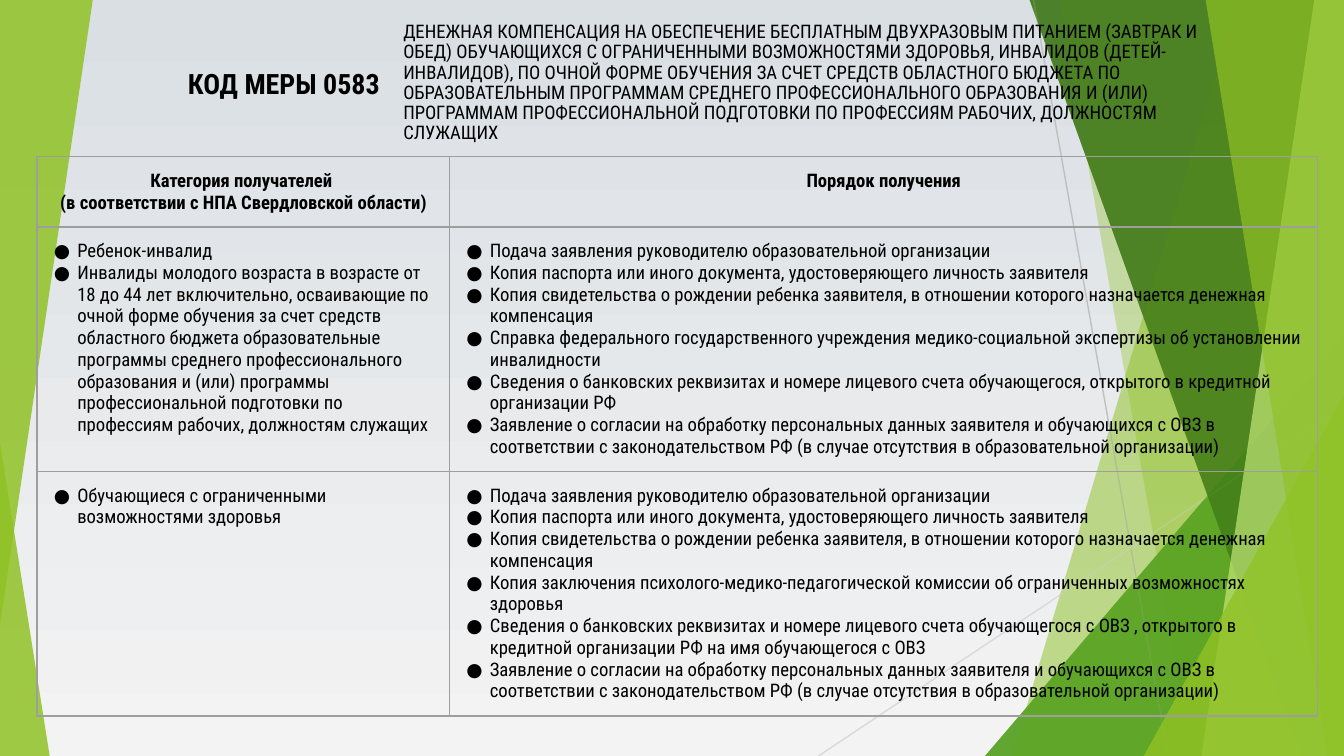
from lxml.etree import SubElement
from pptx import Presentation
from pptx.dml.color import RGBColor
from pptx.enum.shapes import MSO_CONNECTOR, MSO_SHAPE
from pptx.enum.text import MSO_ANCHOR, PP_ALIGN
from pptx.oxml.ns import qn
from pptx.util import Pt

PX = 4572  # 200 px to the inch
SLIDE_BOX = (0, 0, 2000, 1125)
FONT = "Roboto Condensed"

BLACK = RGBColor(0x00, 0x00, 0x00)
SKY = RGBColor(0xDA, 0xDF, 0xE4)
MIST = RGBColor(0xF3, 0xF3, 0xF3)
LIME = RGBColor(0x90, 0xC2, 0x26)
GREEN = RGBColor(0x54, 0xA0, 0x21)
FOREST = RGBColor(0x3F, 0x78, 0x19)
PALE_LIME = RGBColor(0xC0, 0xE4, 0x74)
RAY_DARK = RGBColor(0xBF, 0xBF, 0xBF)
RAY_LIGHT = RGBColor(0xD9, 0xD9, 0xD9)
GRID = RGBColor(0x9E, 0x9E, 0x9E)

# Facets run to the right edge: (top x, bottom x, colour, opacity)
# Corner triangles sit bottom right: (left, top, colour, opacity)
FACETS = [
    (1842, 1506, LIME, 30),
    (1576, 1774, LIME, 20),
    (1466, 500, GREEN, 72),
    (1532, 1936, FOREST, 70),
    (1956, 1788, PALE_LIME, 70),
    (1794, 1976, LIME, 65),
    (1702, 588, LIME, 80),
]
CORNERS = (2, 6)

CODE = "КОД МЕРЫ 0583"
TITLE = (
    "ДЕНЕЖНАЯ КОМПЕНСАЦИЯ НА ОБЕСПЕЧЕНИЕ БЕСПЛАТНЫМ ДВУХРАЗОВЫМ ПИТАНИЕМ (ЗАВТРАК И ОБЕД) "
    "ОБУЧАЮЩИХСЯ С ОГРАНИЧЕННЫМИ ВОЗМОЖНОСТЯМИ ЗДОРОВЬЯ, ИНВАЛИДОВ (ДЕТЕЙ-ИНВАЛИДОВ), "
    "ПО ОЧНОЙ ФОРМЕ ОБУЧЕНИЯ ЗА СЧЕТ СРЕДСТВ ОБЛАСТНОГО БЮДЖЕТА ПО ОБРАЗОВАТЕЛЬНЫМ ПРОГРАММАМ "
    "СРЕДНЕГО ПРОФЕССИОНАЛЬНОГО ОБРАЗОВАНИЯ И (ИЛИ) ПРОГРАММАМ ПРОФЕССИОНАЛЬНОЙ ПОДГОТОВКИ "
    "ПО ПРОФЕССИЯМ РАБОЧИХ, ДОЛЖНОСТЯМ СЛУЖАЩИХ"
)
HEADERS = [
    "Категория получателей \v(в соответствии с НПА Свердловской области)",
    "Порядок получения",
]
COMMON_START = [
    "Подача заявления руководителю образовательной организации",
    "Копия паспорта или иного документа, удостоверяющего личность заявителя",
    "Копия свидетельства о рождении ребенка заявителя, в отношении которого назначается "
    "денежная компенсация",
]
CONSENT = (
    "Заявление о согласии на обработку персональных данных заявителя и обучающихся с ОВЗ "
    "в соответствии с законодательством РФ (в случае отсутствия в образовательной организации)"
)
MEASURES = [
    (
        [
            "Ребенок-инвалид",
            "Инвалиды молодого возраста в возрасте от 18 до 44 лет включительно, осваивающие "
            "по очной форме обучения за счет средств областного бюджета образовательные программы "
            "среднего профессионального образования и (или) программы профессиональной подготовки "
            "по профессиям рабочих, должностям служащих",
        ],
        COMMON_START + [
            "Справка федерального государственного учреждения медико-социальной экспертизы "
            "об установлении инвалидности",
            "Сведения о банковских реквизитах и номере лицевого счета обучающегося, открытого "
            "в кредитной организации РФ",
            CONSENT,
        ],
    ),
    (
        ["Обучающиеся с ограниченными возможностями здоровья"],
        COMMON_START + [
            "Копия заключения психолого-медико-педагогической комиссии об ограниченных "
            "возможностях здоровья",
            "Сведения о банковских реквизитах и номере лицевого счета обучающегося с ОВЗ , "
            "открытого в кредитной организации РФ на имя обучающегося с ОВЗ",
            CONSENT,
        ],
    ),
]


def emu(*lengths):
    return [length * PX for length in lengths]


def write(frame, lines, size=10, bold=False, align=PP_ALIGN.LEFT, spacing=1.0, bullet=None):
    for index, line in enumerate(lines):
        paragraph = frame.paragraphs[0] if index == 0 else frame.add_paragraph()
        paragraph.text = line
        paragraph.alignment = align
        paragraph.line_spacing = spacing
        for run in paragraph.runs:
            run.font.name = FONT
            run.font.size = Pt(size)
            run.font.bold = bold
            run.font.color.rgb = BLACK
        for line_break in paragraph._p.findall(qn("a:br")):
            SubElement(line_break, qn("a:rPr"), sz=str(size * 100))
        if bullet:
            properties = paragraph._p.get_or_add_pPr()
            properties.set("marL", str(40 * PX))
            properties.set("indent", str(-35 * PX))
            colour = SubElement(properties, qn("a:buClr"))
            SubElement(colour, qn("a:srgbClr"), val=str(BLACK))
            SubElement(properties, qn("a:buFont"), typeface=FONT)
            SubElement(properties, qn("a:buChar"), char=bullet)


def add_text(slide, box, text, inset, **style):
    frame = slide.shapes.add_textbox(*emu(*box)).text_frame
    frame.word_wrap = True
    frame.vertical_anchor = MSO_ANCHOR.MIDDLE
    frame.margin_left, frame.margin_top, frame.margin_right, frame.margin_bottom = emu(*inset)
    write(frame, [text], **style)


def tint(shape, colour, opacity):
    shape.shadow.inherit = False
    shape.line.fill.background()
    shape.fill.solid()
    shape.fill.fore_color.rgb = colour
    rgb = shape.fill._xPr.find(".//" + qn("a:srgbClr"))
    SubElement(rgb, qn("a:alpha"), val=str(opacity * 1000))


def add_triangle(slide, box, apex, colour, opacity, rotation=0):
    triangle = slide.shapes.add_shape(MSO_SHAPE.ISOSCELES_TRIANGLE, *emu(*box))
    triangle.adjustments[0] = apex
    triangle.rotation = rotation
    tint(triangle, colour, opacity)


def add_ray(slide, start, end, colour):
    ray = slide.shapes.add_connector(MSO_CONNECTOR.STRAIGHT, *emu(*start, *end))
    ray.line.color.rgb = colour
    ray.line.width = Pt(0.75)
    SubElement(ray._element.spPr, qn("a:effectLst"))


def add_facets(slide, box):
    left, top, width, height = box
    right, bottom = left + width, top + height
    for index, (first, second, colour, opacity) in enumerate(FACETS):
        if index in CORNERS:
            corner = (left + first, top + second, width - first, height - second)
            add_triangle(slide, corner, 1, colour, opacity)
            continue
        outline = slide.shapes.build_freeform(*emu(left + first, top - 1), scale=1.0)
        outline.add_line_segments(
            [emu(right, top - 1), emu(right, bottom), emu(left + second, bottom)], close=True
        )
        tint(outline.convert_to_shape(), colour, opacity)


def add_backdrop(slide, box):
    left, top, width, height = box
    sky = slide.background.fill
    sky.gradient()
    sky.gradient_angle = 270
    for stop, position, colour in zip(sky.gradient_stops, (0, 1), (SKY, MIST)):
        stop.position = position
        stop.color.rgb = colour
    add_facets(slide, box)
    add_triangle(slide, (left, top + 658, 74, height - 658), 0, LIME, 85)
    add_ray(slide, (left + 1538, top), (left + 1738, top + height), RAY_DARK)
    add_ray(slide, (left + width, top + 604), (left + 1218, top + height), RAY_LIGHT)
    add_facets(slide, box)
    add_triangle(slide, (left, top, 138, 930), 1, LIME, 85, rotation=180)


def add_heading(slide, box):
    left, top, width, height = box
    add_text(slide, (left + 422, top, width - 422, height), TITLE, (15, 8, 15, 8), spacing=0.9)
    add_text(slide, (left, top, 422, height), CODE, (20, 20, 20, 20),
             size=15, bold=True, align=PP_ALIGN.RIGHT)


def draw_borders(cell):
    properties = cell._tc.get_or_add_tcPr()
    for position, side in enumerate(("a:lnL", "a:lnR", "a:lnT", "a:lnB")):
        border = SubElement(properties, qn(side), w=str(Pt(0.75)))
        properties.insert(position, border)
        fill = SubElement(border, qn("a:solidFill"))
        SubElement(fill, qn("a:srgbClr"), val=str(GRID))


def add_measures(slide, box):
    table = slide.shapes.add_table(1 + len(MEASURES), len(HEADERS), *emu(*box)).table
    table.first_row = table.horz_banding = False
    for column, width in zip(table.columns, emu(614, box[2] - 614)):
        column.width = width
    body_height = (box[3] - 104) // len(MEASURES)
    for row, height in zip(table.rows, emu(104, *[body_height] * len(MEASURES))):
        row.height = height
    for cell in table.iter_cells():
        cell.margin_left = cell.margin_right = cell.margin_top = cell.margin_bottom = 20 * PX
        cell.fill.background()
        draw_borders(cell)
    for column, header in enumerate(HEADERS):
        write(table.cell(0, column).text_frame, [header], bold=True, align=PP_ALIGN.CENTER)
    for row, measure in enumerate(MEASURES, start=1):
        for column, items in enumerate(measure):
            write(table.cell(row, column).text_frame, items, bullet="●")


def main():
    deck = Presentation()
    deck.slide_width, deck.slide_height = emu(*SLIDE_BOX[2:])
    slide = deck.slides.add_slide(deck.slide_layouts[6])
    add_backdrop(slide, SLIDE_BOX)
    add_measures(slide, (55, 233, 1906, 832))
    add_heading(slide, (163, 47, 1681, 154))
    deck.save("out.pptx")


if __name__ == "__main__":
    main()
